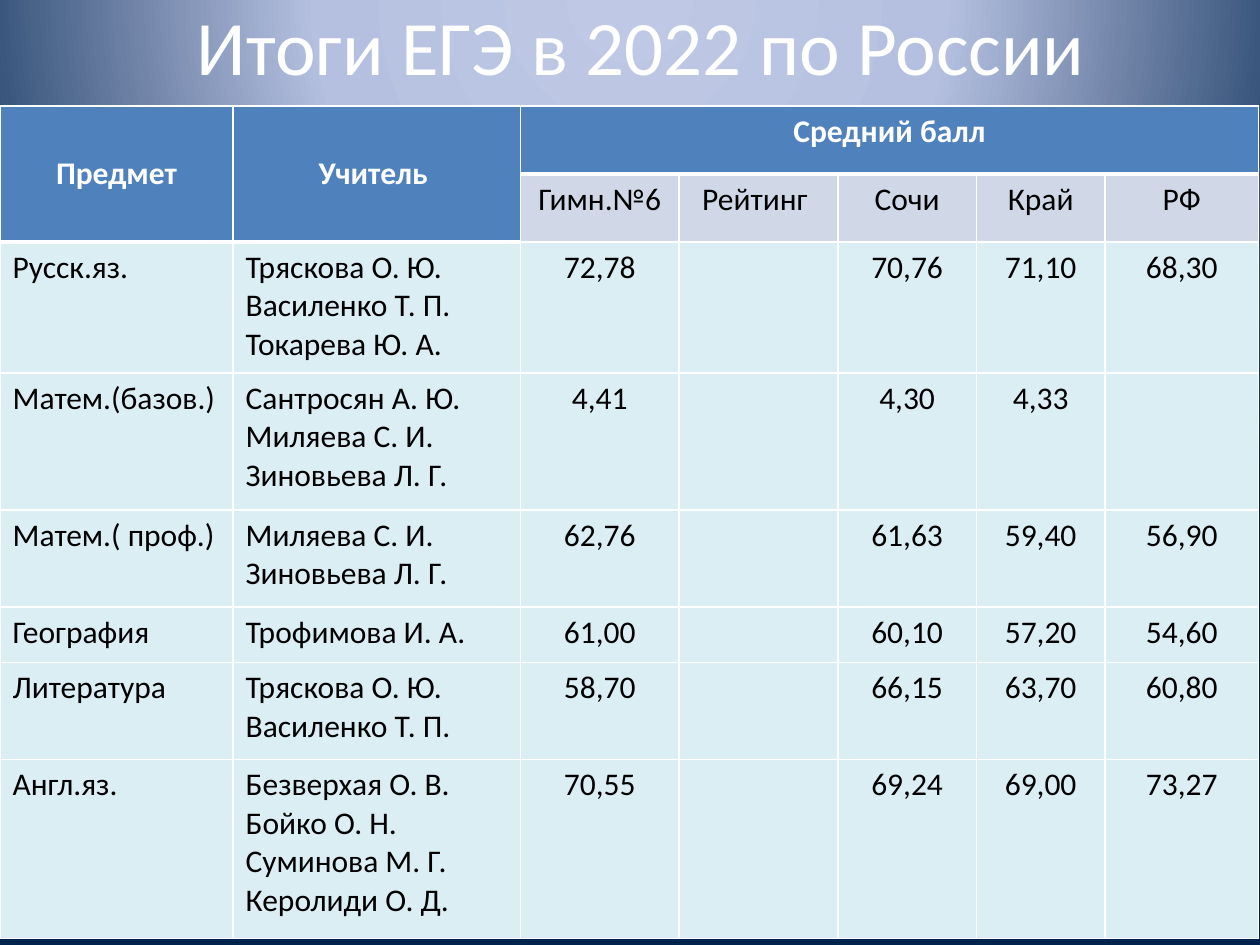
import pptx
import pptx.dml.color
import pptx.enum.text
import pptx.oxml.ns
import pptx.util
import lxml.etree

Inches = pptx.util.Inches
RGBColor = pptx.dml.color.RGBColor
Align = pptx.enum.text.PP_ALIGN
Anchor = pptx.enum.text.MSO_ANCHOR
qn = pptx.oxml.ns.qn

WHITE = RGBColor(0xFF, 0xFF, 0xFF)
BLACK = RGBColor(0x00, 0x00, 0x00)
HEADER_BLUE = RGBColor(0x4F, 0x81, 0xBD)
SUBHEADER_BLUE = RGBColor(0xD0, 0xD8, 0xE8)
BODY_BLUE = RGBColor(0xDB, 0xEE, 0xF4)
GLOW_STOPS = [
    (0, RGBColor(0xBF, 0xC9, 0xE5)),
    (40, RGBColor(0xB5, 0xC0, 0xE0)),
    (100, RGBColor(0x00, 0x23, 0x4D)),
]
GLOW_CENTRE = {"l": 50, "t": -80, "r": 50, "b": 180}

TITLE_FONT = {"name": "Calibri", "size": pptx.util.Pt(44)}
HEADER_FONT = {"name": "Calibri", "size": pptx.util.Pt(18), "bold": True}
BODY_FONT = {"name": "Calibri", "size": pptx.util.Pt(18), "bold": False}

COLUMN_WIDTHS = [1.85, 2.28, 1.26, 1.26, 1.1, 1.02, 1.22]
ROW_HEIGHTS = [0.54, 0.54, 1.04, 1.09, 0.77, 0.44, 0.77, 1.42]
HEADERS = ["Предмет", "Учитель ", "Средний балл"]
SUBHEADERS = ["Гимн.№6", "Рейтинг ", "Сочи", "Край", "РФ"]
RESULTS = [
    ("Русск.яз.", "Тряскова О. Ю.\nВасиленко Т. П.\nТокарева Ю. А.",
     "72,78", "", "70,76", "71,10", "68,30"),
    ("Матем.(базов.)", "Сантросян А. Ю.\nМиляева С. И.\nЗиновьева Л. Г.",
     "4,41", "", "4,30", "4,33", ""),
    ("Матем.( проф.)", "Миляева С. И.\nЗиновьева Л. Г.",
     "62,76", "", "61,63", "59,40", "56,90"),
    ("География", "Трофимова И. А.",
     "61,00", "", "60,10", "57,20", "54,60"),
    ("Литература", "Тряскова О. Ю.\nВасиленко Т. П.",
     "58,70", "", "66,15", "63,70", "60,80"),
    ("Англ.яз.", "Безверхая О. В.\nБойко О. Н.\nСуминова М. Г.\nКеролиди О. Д.",
     "70,55", "", "69,24", "69,00", "73,27"),
]


def add_element(parent, tag, **attributes):
    return lxml.etree.SubElement(parent, qn(tag), attributes)


def paint_background(slide):
    fill = slide.background.fill
    fill.solid()
    solid = next(slide.element.iter(qn("a:solidFill")))
    gradient = lxml.etree.Element(qn("a:gradFill"), rotWithShape="1")
    stops = add_element(gradient, "a:gsLst")
    for position, color in GLOW_STOPS:
        stop = add_element(stops, "a:gs", pos=str(position * 1000))
        add_element(stop, "a:srgbClr", val=str(color))
    circle = add_element(gradient, "a:path", path="circle")
    centre = {side: str(value * 1000) for side, value in GLOW_CENTRE.items()}
    add_element(circle, "a:fillToRect", **centre)
    solid.getparent().replace(solid, gradient)


def write_text(frame, text, font, color, align):
    frame.text = text
    for para in frame.paragraphs:
        para.alignment = align
        for name, value in font.items():
            setattr(para.font, name, value)
        for span in para.runs:
            for name, value in font.items():
                setattr(span.font, name, value)
            span.font.color.rgb = color


def add_title(slide, text):
    box = slide.shapes.add_textbox(Inches(0.59), Inches(-0.27), Inches(9), Inches(1.25))
    box.text_frame.word_wrap = True
    box.text_frame.vertical_anchor = Anchor.MIDDLE
    write_text(box.text_frame, text, TITLE_FONT, WHITE, Align.CENTER)


def set_borders(cell, bottom_width):
    properties = cell._tc.get_or_add_tcPr()
    widths = {"a:lnL": 1, "a:lnR": 1, "a:lnT": 1, "a:lnB": bottom_width}
    for index, (tag, width) in enumerate(widths.items()):
        line = lxml.etree.Element(qn(tag), w=str(pptx.util.Pt(width)))
        add_element(add_element(line, "a:solidFill"), "a:srgbClr", val=str(WHITE))
        properties.insert(index, line)


def format_cell(cell, text, font, color, fill, align, bottom_width=1):
    write_text(cell.text_frame, text, font, color, align)
    cell.fill.solid()
    cell.fill.fore_color.rgb = fill
    set_borders(cell, bottom_width)


def fill_headers(table):
    for column in range(len(COLUMN_WIDTHS)):
        text = HEADERS[column] if column < len(HEADERS) else ""
        format_cell(table.cell(0, column), text, HEADER_FONT, WHITE,
                    HEADER_BLUE, Align.CENTER, 3)
    for column in range(2):
        format_cell(table.cell(1, column), "", HEADER_FONT, WHITE,
                    HEADER_BLUE, Align.CENTER, 3)
        table.cell(0, column).merge(table.cell(1, column))
        table.cell(0, column).vertical_anchor = Anchor.MIDDLE
    table.cell(0, 2).merge(table.cell(0, len(COLUMN_WIDTHS) - 1))
    for column, text in enumerate(SUBHEADERS, start=2):
        format_cell(table.cell(1, column), text, BODY_FONT, BLACK,
                    SUBHEADER_BLUE, Align.CENTER)


def add_results_table(slide):
    frame = slide.shapes.add_table(
        len(ROW_HEIGHTS), len(COLUMN_WIDTHS), Inches(0), Inches(0.84),
        Inches(sum(COLUMN_WIDTHS)), Inches(sum(ROW_HEIGHTS)))
    table = frame.table
    table.horz_banding = False
    for column, width in zip(table.columns, COLUMN_WIDTHS):
        column.width = Inches(width)
    for row, height in zip(table.rows, ROW_HEIGHTS):
        row.height = Inches(height)
    fill_headers(table)
    for row, result in enumerate(RESULTS, start=2):
        for column, text in enumerate(result):
            align = Align.LEFT if column < 2 else Align.CENTER
            format_cell(table.cell(row, column), text, BODY_FONT, BLACK,
                        BODY_BLUE, align)


def main():
    deck = pptx.Presentation()
    deck.slide_width = Inches(10)
    deck.slide_height = Inches(7.5)
    page = deck.slides.add_slide(deck.slide_layouts[6])
    paint_background(page)
    add_title(page, "Итоги ЕГЭ в 2022 по России")
    add_results_table(page)
    deck.save("out.pptx")


if __name__ == "__main__":
    main()
